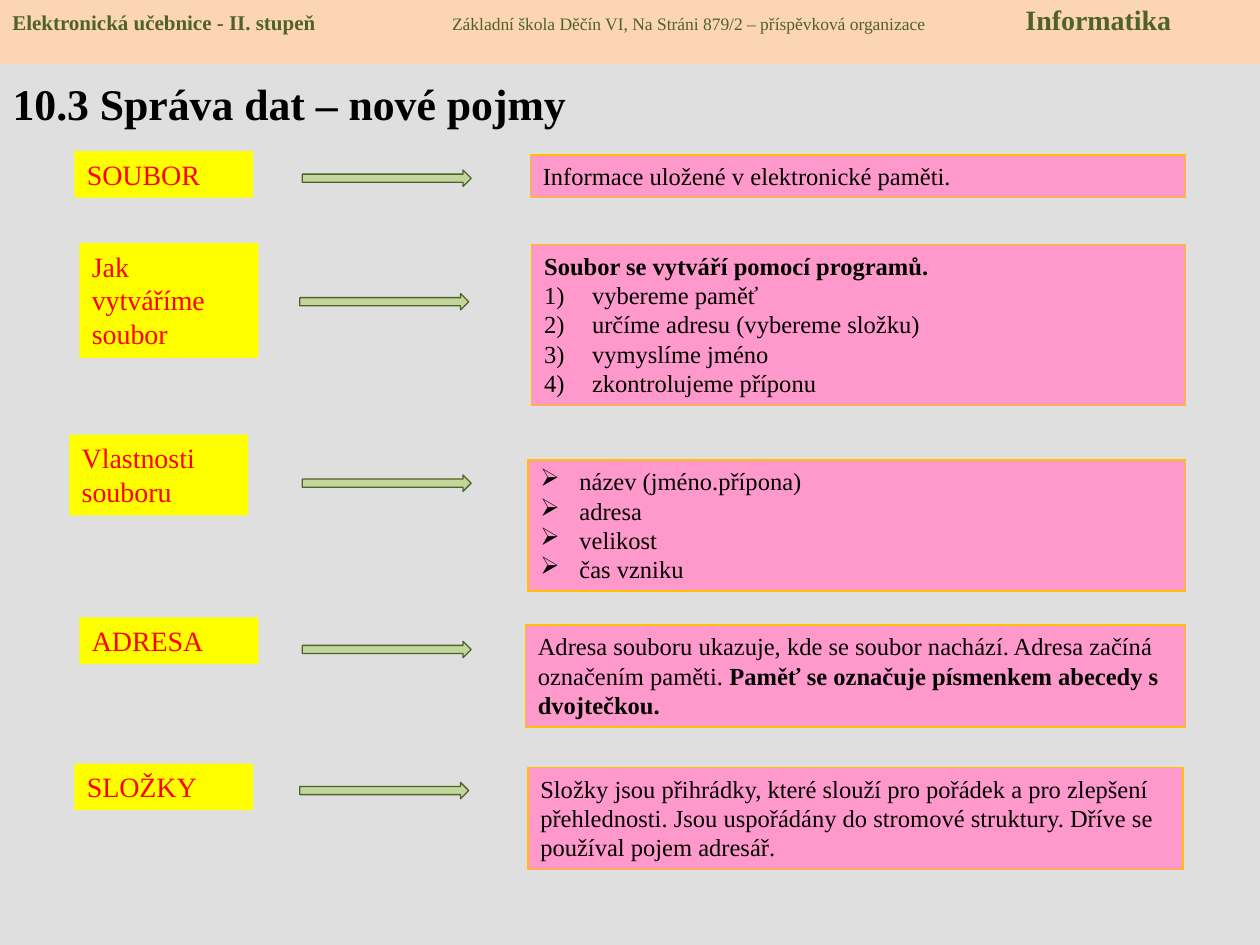
from dataclasses import dataclass
from typing import NamedTuple, Optional

from lxml.etree import SubElement
from pptx import Presentation
from pptx.dml.color import RGBColor
from pptx.enum.shapes import MSO_SHAPE as Shape
from pptx.enum.text import MSO_ANCHOR as Anchor, MSO_AUTO_SIZE as AutoSize, PP_ALIGN as Align
from pptx.oxml.ns import qn
from pptx.util import Inches, Pt

WIDTH, HEIGHT = Inches(10), Inches(7.5)
FONT = "Times New Roman"
GREEN = "4F6228"
NUMBER, ARROW = "number", "arrow"
INDENTS = {NUMBER: 0.38, ARROW: 0.31}


class Area(NamedTuple):
    """Left, top, width and height in percent of the slide."""
    x: float
    y: float
    w: float
    h: float

    def emu(self) -> tuple:
        return (int(WIDTH * self.x / 100), int(HEIGHT * self.y / 100),
                int(WIDTH * self.w / 100), int(HEIGHT * self.h / 100))


class Piece(NamedTuple):
    text: str
    size: float
    color: str = "000000"
    bold: bool = False


@dataclass
class Para:
    pieces: list
    bullet: Optional[str] = None


@dataclass
class Concept:
    term: str
    term_area: Area
    arrow_area: Area
    note_area: Area
    note: list


def rgb(value: str) -> RGBColor:
    return RGBColor.from_string(value)


def note(text: str, bold: bool = False) -> Piece:
    return Piece(text, 14, bold=bold)


def items(bullet: str, *texts: str) -> list:
    return [Para([note(t)], bullet) for t in texts]


def term_area(x: float, y: float, lines: int) -> Area:
    return Area(x, y, 14.2, 1.33 + 3.6 * lines)


def arrow_area(x: float, y: float) -> Area:
    return Area(x, y, 13.4, 1.73)


def add_bullet(p, bullet: str) -> None:
    pPr = p._p.get_or_add_pPr()
    indent = Inches(INDENTS[bullet])
    pPr.set("marL", str(indent))
    pPr.set("indent", str(-indent))
    if bullet == NUMBER:
        SubElement(pPr, qn("a:buAutoNum"), type="arabicParenR")
    else:
        SubElement(pPr, qn("a:buChar"), char="➢")


def add_tabs(p, *stops: float) -> None:
    tabs = SubElement(p._p.get_or_add_pPr(), qn("a:tabLst"))
    for stop in stops:
        SubElement(tabs, qn("a:tab"), pos=str(Inches(stop)), algn="l")


def write(tf, paras: list) -> None:
    tf.word_wrap = True
    for i, para in enumerate(paras):
        p = tf.add_paragraph() if i else tf.paragraphs[0]
        p.alignment = Align.LEFT
        if para.bullet:
            add_bullet(p, para.bullet)
        for piece in para.pieces:
            r = p.add_run()
            r.text = piece.text
            r.font.name = FONT
            r.font.size = Pt(piece.size)
            r.font.bold = piece.bold
            r.font.color.rgb = rgb(piece.color)


def add_block(s, kind, area: Area, fill: str, line: Optional[str] = None):
    sp = s.shapes.add_shape(kind, *area.emu())
    sp.shadow.inherit = False
    sp.fill.solid()
    sp.fill.fore_color.rgb = rgb(fill)
    if line:
        sp.line.color.rgb = rgb(line)
        sp.line.width = Pt(0.75)
    else:
        sp.line.fill.background()
    sp.text_frame.vertical_anchor = Anchor.TOP
    return sp


def add_concept(s, c: Concept) -> None:
    term = add_block(s, Shape.RECTANGLE, c.term_area, "FFFF00")
    write(term.text_frame, [Para([Piece(c.term, 16, "FF0000")])])
    add_block(s, Shape.RIGHT_ARROW, c.arrow_area, "C3D69B", GREEN)
    box = add_block(s, Shape.RECTANGLE, c.note_area, "FF99CC", "FFC000")
    write(box.text_frame, c.note)
    for sp in (term, box):
        sp.text_frame.auto_size = AutoSize.SHAPE_TO_FIT_TEXT


def add_title(s, text: str) -> None:
    title = s.shapes.title
    title.left, title.top, title.width, title.height = Area(0, 6.8, 90, 8.13).emu()
    title.text_frame.vertical_anchor = Anchor.MIDDLE
    write(title.text_frame, [Para([Piece(text, 25, bold=True)])])


def add_header(s) -> None:
    sp = add_block(s, Shape.RECTANGLE, Area(0, -0.4, 100, 7.2), "FCD5B5")
    add_tabs(sp.text_frame.paragraphs[0], 3.49, 8.04)
    write(sp.text_frame, [Para([
        Piece("Elektronická učebnice - II. stupeň\t", 12, GREEN, True),
        Piece("Základní škola Děčín VI, Na Stráni 879/2 – příspěvková organizace\t", 10, GREEN),
        Piece("Informatika", 16, GREEN, True),
    ])])


CONCEPTS = [
    Concept("SOUBOR", term_area(5.9, 16, 1), arrow_area(24, 18),
            Area(42.1, 16.4, 52, 4.53),
            [Para([note("Informace uložené v elektronické paměti.")])]),
    Concept("Jak vytváříme soubor", term_area(6.3, 25.73, 3), arrow_area(23.8, 31.07),
            Area(42.2, 25.87, 51.9, 17.07),
            [Para([note("Soubor se vytváří pomocí programů.", True)])]
            + items(NUMBER, "vybereme paměť", "určíme adresu (vybereme složku)",
                    "vymyslíme jméno", "zkontrolujeme příponu")),
    Concept("Vlastnosti souboru", term_area(5.5, 46, 2), arrow_area(24, 50.27),
            Area(41.9, 48.67, 52.2, 13.87),
            items(ARROW, "název (jméno.přípona)", "adresa", "velikost", "čas vzniku")),
    Concept("ADRESA", term_area(6.3, 65.33, 1), arrow_area(24, 67.87),
            Area(41.7, 66.13, 52.4, 10.8),
            [Para([note("Adresa souboru ukazuje, kde se soubor nachází. "
                        "Adresa začíná označením paměti. "),
                   note("Paměť se označuje písmenkem abecedy s dvojtečkou.", True)])]),
    Concept("SLOŽKY", term_area(5.9, 80.8, 1), arrow_area(23.8, 82.8),
            Area(41.9, 81.2, 52, 10.8),
            [Para([note("Složky jsou přihrádky, které slouží pro pořádek a pro zlepšení "
                        "přehlednosti. Jsou uspořádány do stromové struktury. "
                        "Dříve se používal pojem adresář.")])]),
]


def main() -> None:
    prs = Presentation()
    prs.slide_width, prs.slide_height = WIDTH, HEIGHT
    s = prs.slides.add_slide(prs.slide_layouts[5])
    s.background.fill.solid()
    s.background.fill.fore_color.rgb = rgb("DFDFDF")
    add_title(s, "10.3 Správa dat – nové pojmy")
    add_header(s)
    for concept in CONCEPTS:
        add_concept(s, concept)
    prs.save("out.pptx")


if __name__ == "__main__":
    main()
